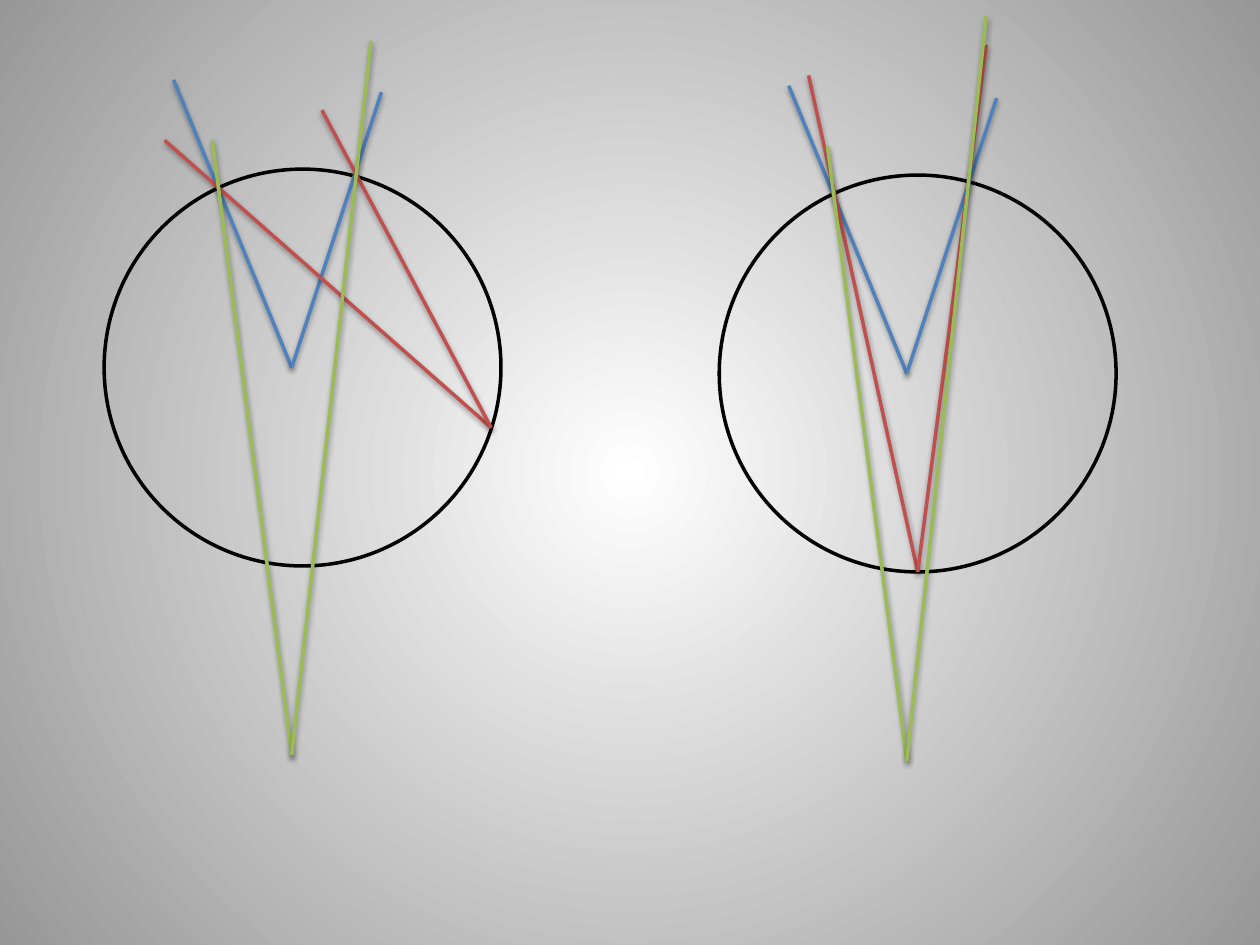
import pptx
import pptx.util
import pptx.dml.color
import pptx.enum.shapes
import pptx.oxml
import pptx.oxml.ns
from dataclasses import dataclass

Cm = pptx.util.Cm
RGB = pptx.dml.color.RGBColor.from_string


@dataclass(frozen=True)
class Theme:
    centre: str = "FFFFFF"
    edge: str = "979797"
    circle: str = "000000"
    central: str = "4F81BD"
    inscribed: str = "C0504D"
    outside: str = "9BBB59"
    line_width: float = 2


THEME = Theme()
DIAMETER = 8

SHADOW = (
    f'<a:effectLst {pptx.oxml.ns.nsdecls("a")}>'
    '<a:outerShdw blurRad="40000" dist="20000" dir="5400000" rotWithShape="0">'
    '<a:srgbClr val="000000"><a:alpha val="38000"/></a:srgbClr>'
    '</a:outerShdw></a:effectLst>'
)
RADIAL = (
    f'<a:path {pptx.oxml.ns.nsdecls("a")} path="circle">'
    '<a:fillToRect l="50000" t="50000" r="50000" b="50000"/></a:path>'
)


def format_line(line, color):
    line.fill.solid()
    line_format = {"color": RGB(color), "width": pptx.util.Pt(THEME.line_width)}
    line.color.rgb = line_format.pop("color")
    for name, value in line_format.items():
        setattr(line, name, value)


def paint_background(slide):
    fill = slide.background.fill
    fill.gradient()
    for stop, color in zip(fill.gradient_stops, (THEME.centre, THEME.edge)):
        stop.color.rgb = RGB(color)
    linear = next(slide.element.iter(pptx.oxml.ns.qn("a:lin")))
    linear.getparent().replace(linear, pptx.oxml.parse_xml(RADIAL))


def draw_angle(slide, left, top, color, points):
    """Join first arm end, vertex and second arm end, measured from the circle's box."""
    for (x1, y1), (x2, y2) in zip(points, points[1:]):
        arm = slide.shapes.add_connector(
            pptx.enum.shapes.MSO_CONNECTOR.STRAIGHT,
            Cm(left + x1), Cm(top + y1), Cm(left + x2), Cm(top + y2))
        format_line(arm.line, color)
        arm.element.spPr.append(pptx.oxml.parse_xml(SHADOW))


def draw_circle_figure(slide, left, top, inscribed, outside_end):
    # Circle
    circle = slide.shapes.add_shape(
        pptx.enum.shapes.MSO_SHAPE.OVAL,
        Cm(left), Cm(top), Cm(DIAMETER), Cm(DIAMETER))
    circle.shadow.inherit = False
    circle.fill.background()
    format_line(circle.line, THEME.circle)

    # Angles with vertex at the centre, on the circle and outside it
    central = [(1.4, -1.8), (3.78, 4), (5.59, -1.55)]
    outside = [(2.18, -0.58), (3.78, 11.81), outside_end]
    for color, points in ((THEME.central, central),
                          (THEME.inscribed, inscribed),
                          (THEME.outside, outside)):
        draw_angle(slide, left, top, color, points)


def main():
    deck = pptx.Presentation()
    deck.slide_width, deck.slide_height = Cm(25.4), Cm(19.05)
    slide = deck.slides.add_slide(deck.slide_layouts[6])
    paint_background(slide)

    # Right figure: inscribed vertex at the bottom of the circle
    draw_circle_figure(slide, 14.5, 3.53,
                       inscribed=[(1.8, -2.01), (4, 8), (5.38, -2.62)],
                       outside_end=(5.38, -3.2))
    # Left figure: inscribed vertex at the side of the circle
    draw_circle_figure(slide, 2.1, 3.41,
                       inscribed=[(1.22, -0.58), (7.8, 5.21), (4.39, -1.19)],
                       outside_end=(5.38, -2.59))
    deck.save("out.pptx")


if __name__ == "__main__":
    main()
